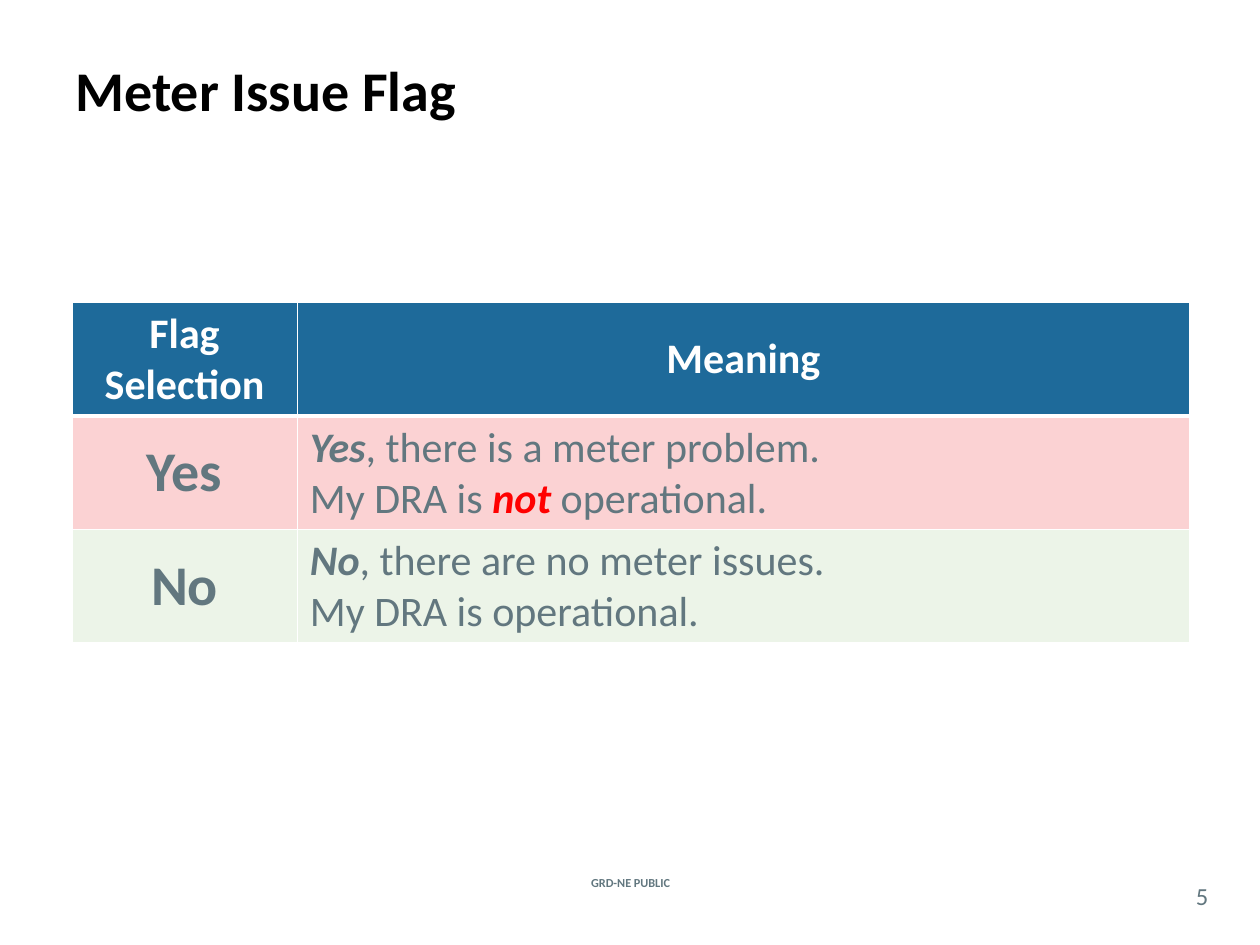
"""Build the Meter Issue Flag slide with its flag selection table."""
import pptx
import pptx.dml.color
import pptx.enum.text
import pptx.oxml
import pptx.oxml.ns
import pptx.util
from pptx.util import Inches

COLORS = {
    "title": "000000",
    "body": "62777F",
    "white": "FFFFFF",
    "header": "1E6A9A",
    "yes": "FBD2D3",
    "no": "ECF4E8",
    "alert": "FF0000",
}
FONT = "Calibri"
CENTER = pptx.enum.text.PP_ALIGN.CENTER
LEFT = pptx.enum.text.PP_ALIGN.LEFT
MIDDLE = pptx.enum.text.MSO_ANCHOR.MIDDLE


def rgb(color):
    return pptx.dml.color.RGBColor.from_string(COLORS[color])


def style_run(run, size, color, bold=False, italic=False):
    font = run.font
    font.name = FONT
    font.size = pptx.util.Pt(size)
    font.bold = bold
    font.italic = italic
    font.color.rgb = rgb(color)


def write_lines(frame, lines, align, size):
    for index, line in enumerate(lines):
        paragraph = frame.paragraphs[0] if index == 0 else frame.add_paragraph()
        paragraph.alignment = align
        for words, *look in line:
            run = paragraph.add_run()
            run.text = words
            style_run(run, size, *look)


def add_label(slide, box, words, size, color, align, bold=False, inset=0.0):
    label = slide.shapes.add_textbox(*map(Inches, box))
    frame = label.text_frame
    frame.word_wrap = True
    frame.vertical_anchor = MIDDLE
    frame.margin_left = frame.margin_right = Inches(inset)
    frame.margin_top = frame.margin_bottom = Inches(inset / 2)
    write_lines(frame, [[(words, color, bold)]], align, size)


def set_borders(cell, top, bottom):
    properties = cell._tc.get_or_add_tcPr()
    for side, points in (("L", 1), ("R", 1), ("T", top), ("B", bottom)):
        properties.append(pptx.oxml.parse_xml(
            f'<a:ln{side} {pptx.oxml.ns.nsdecls("a")} w="{pptx.util.Pt(points)}">'
            f'<a:solidFill><a:srgbClr val="{COLORS["white"]}"/></a:solidFill>'
            f'</a:ln{side}>'))


def add_flag_table(slide):
    bold_white = ("white", True)
    emphasis = ("body", True, True)
    rows = [
        ("header", 24,
         [[("Flag", *bold_white)], [("Selection", *bold_white)]],
         [[("Meaning", *bold_white)]]),
        ("yes", 32,
         [[("Yes", "body", True)]],
         [[("Yes", *emphasis), (", there is a meter problem.", "body")],
          [("My DRA is ", "body"), ("not ", "alert", True, True),
           ("operational.", "body")]]),
        ("no", 32,
         [[("No", "body", True)]],
         [[("No", *emphasis), (", there are no meter issues.", "body")],
          [("My DRA is operational.", "body")]]),
    ]
    frame = slide.shapes.add_table(
        len(rows), 2, Inches(0.57), Inches(2.4), Inches(8.87), Inches(2.7))
    flags = frame.table
    for column, width in zip(flags.columns, (1.79, 7.08)):
        column.width = Inches(width)
    for row_index, (fill, flag_size, flag, meaning) in enumerate(rows):
        meaning_align = CENTER if row_index == 0 else LEFT
        entries = ((flag, CENTER, flag_size), (meaning, meaning_align, 24))
        for column_index, (lines, align, size) in enumerate(entries):
            cell = flags.cell(row_index, column_index)
            cell.vertical_anchor = MIDDLE
            set_borders(cell, top=3 if row_index == 1 else 1,
                        bottom=3 if row_index == 0 else 1)
            cell.fill.solid()
            cell.fill.fore_color.rgb = rgb(fill)
            write_lines(cell.text_frame, lines, align, size)


def main():
    deck = pptx.Presentation()
    deck.slide_width = Inches(10)
    deck.slide_height = Inches(7.5)
    slide = deck.slides.add_slide(deck.slide_layouts[6])
    add_label(slide, (4.27, 6.92, 1.47, 0.17), "GRD-NE PUBLIC", 7, "body",
              CENTER, bold=True)
    add_label(slide, (0.5, 0.08, 9, 1.25), "Meter Issue Flag", 32, "title",
              LEFT, bold=True, inset=0.1)
    add_label(slide, (9.33, 6.96, 0.42, 0.29), "5", 14, "body", CENTER)
    add_flag_table(slide)
    deck.save("out.pptx")


if __name__ == "__main__":
    main()
